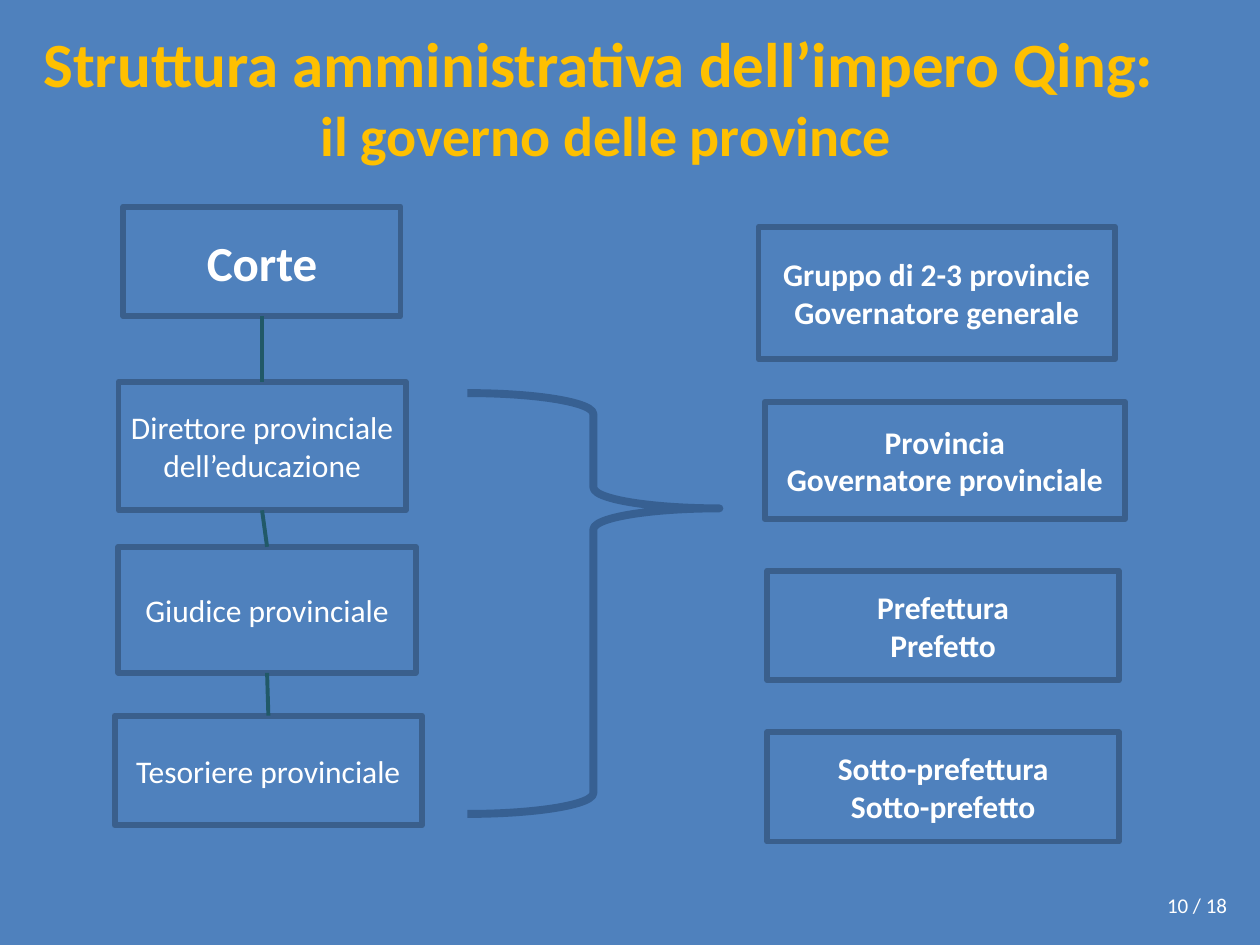
from lxml import etree
from pptx import Presentation
from pptx import util as u
from pptx.dml.color import RGBColor
from pptx.enum import shapes, text
from pptx.oxml.ns import qn

BLUE = RGBColor(0x4F, 0x81, 0xBD)
BORDER = RGBColor(0x3A, 0x5F, 0x8C)
BRACE = RGBColor(0x37, 0x60, 0x92)
TEAL = RGBColor(0x21, 0x59, 0x68)
GOLD = RGBColor(0xFF, 0xC0, 0x00)
WHITE = RGBColor(0xFF, 0xFF, 0xFF)

OFFICES = [
    ((0.98, 1.64, 2.2, 0.87), "Corte", {"size": u.Pt(28), "bold": True}),
    ((0.94, 3.03, 2.28, 1.02), "Direttore provinciale dell’educazione", {}),
    ((0.94, 4.34, 2.36, 1), "Giudice provinciale", {}),
    ((0.91, 5.68, 2.44, 0.87), "Tesoriere provinciale", {}),
]
TERRITORIES = [
    ((6.02, 1.8, 2.83, 1.05), "Gruppo di 2-3 provincie\nGovernatore generale"),
    ((6.07, 3.19, 2.86, 0.93), "Provincia\nGovernatore provinciale"),
    ((6.09, 4.53, 2.79, 0.87), "Prefettura\nPrefetto"),
    ((6.09, 5.81, 2.79, 0.87), "Sotto-prefettura\nSotto-prefetto"),
]


def inches(values):
    """Convert plain numbers to lengths."""
    return [u.Inches(value) for value in values]


class Deck:
    """Holds the shared style and the current slide."""

    text_style = {"name": "Calibri", "size": u.Pt(18), "bold": False}
    frame_style = {"word_wrap": True, "auto_size": text.MSO_AUTO_SIZE.NONE,
                   "vertical_anchor": text.MSO_ANCHOR.MIDDLE,
                   "margin_left": u.Inches(0.08), "margin_right": u.Inches(0.08)}

    def __init__(self):
        """Start a presentation with one title-only slide."""
        self.prs = Presentation()
        self.prs.slide_width, self.prs.slide_height = inches((10, 7.5))
        self.slide = self.prs.slides.add_slide(self.prs.slide_layouts[5])
        fill = self.slide.background.fill
        fill.solid()
        fill.fore_color.rgb = BLUE

    def style_run(self, run, color, **changes):
        """Apply the text style to a run."""
        for key, value in {**self.text_style, **changes}.items():
            setattr(run.font, key, value)
        run.font.color.rgb = color

    def fill_text(self, frame, words, align=text.PP_ALIGN.CENTER, **changes):
        """Fill a text frame with styled white paragraphs."""
        for key, value in self.frame_style.items():
            setattr(frame, key, value)
        frame.text = words
        for paragraph in frame.paragraphs:
            paragraph.alignment = align
            for run in paragraph.runs:
                self.style_run(run, WHITE, **changes)

    def title(self, place, words, sizes):
        """Fill the title placeholder, one size for each line."""
        heading = self.slide.shapes.title
        heading.left, heading.top, heading.width, heading.height = inches(place)
        self.fill_text(heading.text_frame, words)
        for run, size in zip(heading.text_frame.paragraphs[0].runs, sizes):
            self.style_run(run, GOLD, size=u.Pt(size), bold=True)

    def box(self, place, words, **changes):
        """Add a bordered rectangle with text."""
        box = self.slide.shapes.add_shape(shapes.MSO_SHAPE.RECTANGLE, *inches(place))
        box.shadow.inherit = False
        box.fill.solid()
        box.fill.fore_color.rgb = BLUE
        box.line.color.rgb, box.line.width = BORDER, u.Pt(3.35)
        self.fill_text(box.text_frame, words, **changes)
        return box

    def brace(self, place, adjustments):
        """Add a right brace."""
        brace = self.slide.shapes.add_shape(shapes.MSO_SHAPE.RIGHT_BRACE, *inches(place))
        brace.shadow.inherit = False
        brace.fill.background()
        brace.line.color.rgb, brace.line.width = BRACE, u.Pt(4.5)
        for index, value in enumerate(adjustments):
            brace.adjustments[index] = value

    def link(self, upper, lower):
        """Join the bottom of one box to the top of the next."""
        link = self.slide.shapes.add_connector(shapes.MSO_CONNECTOR.STRAIGHT, 0, 0, 0, 0)
        link.begin_connect(upper, 2)
        link.end_connect(lower, 0)
        link.line.color.rgb, link.line.width = TEAL, u.Pt(2.25)
        etree.SubElement(link._element.spPr, qn("a:effectLst"))

    def label(self, place, words, **changes):
        """Add a plain text box."""
        label = self.slide.shapes.add_textbox(*inches(place))
        self.fill_text(label.text_frame, words, **changes)


def main():
    """Build the slide and save it."""
    deck = Deck()
    deck.title((0.12, 0.3, 9.38, 0.93),
               "Struttura amministrativa dell’impero Qing: \vil governo delle province",
               (36, 32))
    deck.label((9.02, 6.98, 0.8, 0.4), "10 / 18",
               align=text.PP_ALIGN.RIGHT, size=u.Pt(12))
    offices = [deck.box(place, words, **changes) for place, words, changes in OFFICES]
    for upper, lower in zip(offices, offices[1:]):
        deck.link(upper, lower)
    deck.brace((3.71, 3.12, 2, 3.34), (0.083, 0.274))
    for place, words in TERRITORIES:
        deck.box(place, words, bold=True)
    deck.prs.save("out.pptx")


if __name__ == "__main__":
    main()
